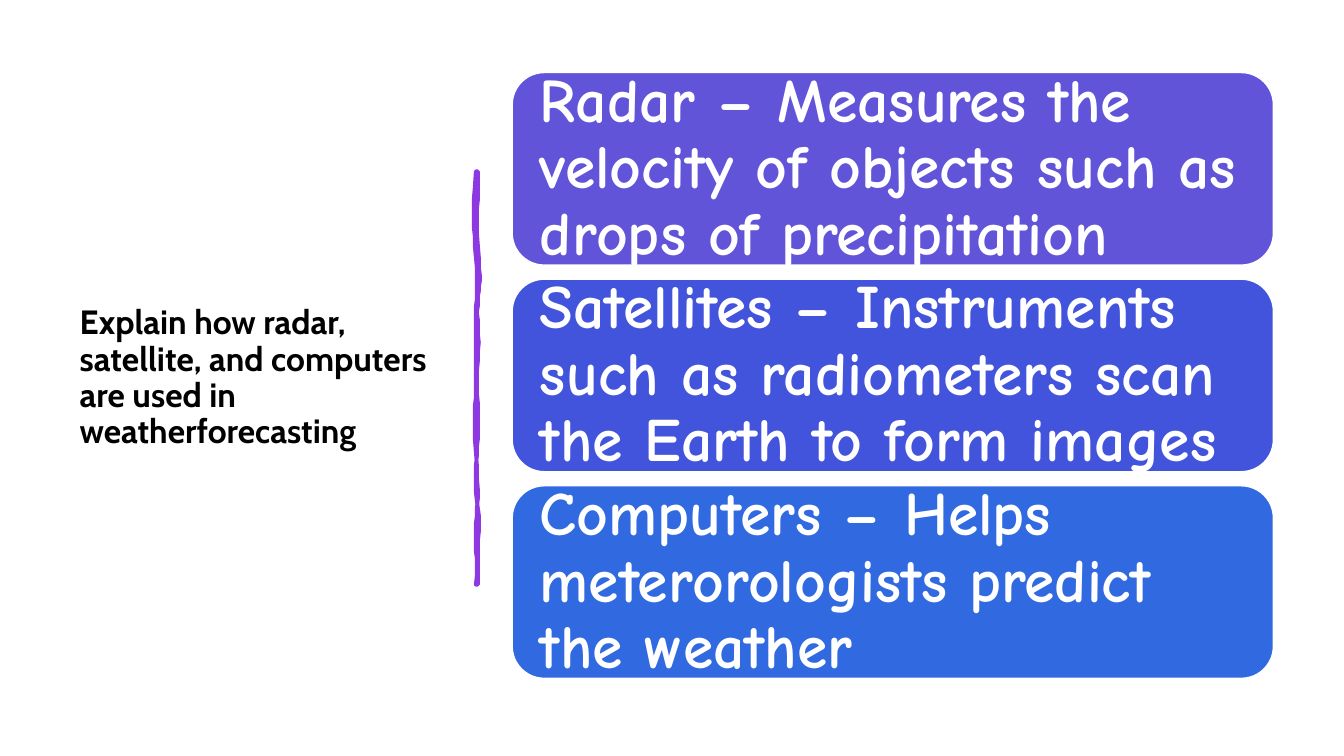
from dataclasses import dataclass

from pptx import Presentation
from pptx.dml.color import RGBColor
from pptx.enum.shapes import MSO_SHAPE
from pptx.enum.text import MSO_ANCHOR, MSO_AUTO_SIZE, PP_ALIGN
from pptx.util import Inches, Pt

WIDE, TALL = Inches(13.33), Inches(7.5)
CELL = TALL / 750
STEPS = 8


@dataclass
class Card:
    words: str
    fill: str


@dataclass
class Bend:
    pull: tuple[int, int]
    push: tuple[int, int]
    end: tuple[int, int]


CARDS = [
    Card("Radar – Measures the velocity of objects such as drops of precipitation", "6154D9"),
    Card("Satellites – Instruments such as radiometers scan the Earth to form images", "4254DC"),
    Card("Computers – Helps meterorologists predict the weather", "3069E0"),
]

START = (472, 170)
BENDS = [
    Bend((473, 170), (473, 170), (474, 170)),
    Bend((476, 186), (471, 207), (474, 243)),
    Bend((477, 279), (475, 285), (474, 299)),
    Bend((472, 313), (476, 331), (474, 359)),
    Bend((471, 387), (476, 413), (474, 436)),
    Bend((472, 458), (471, 485), (474, 504)),
    Bend((477, 523), (472, 548), (474, 580)),
    Bend((473, 580), (473, 580), (472, 580)),
    Bend((474, 554), (471, 536), (472, 524)),
    Bend((473, 513), (475, 483), (472, 448)),
    Bend((469, 413), (472, 406), (472, 375)),
    Bend((471, 345), (472, 341), (472, 319)),
    Bend((472, 298), (474, 285), (472, 255)),
    Bend((470, 226), (469, 212), (472, 170)),
]


def tint(code: str) -> RGBColor:
    return RGBColor.from_string(code)


def across(share: float) -> int:
    return round(WIDE * share / 100)


def down(share: float) -> int:
    return round(TALL * share / 100)


def write(shape, words: str, font: str, size: int, ink: str) -> None:
    frame = shape.text_frame
    frame.word_wrap = True
    frame.auto_size = MSO_AUTO_SIZE.NONE
    frame.vertical_anchor = MSO_ANCHOR.MIDDLE
    para = frame.paragraphs[0]
    para.alignment = PP_ALIGN.LEFT
    para.line_spacing = 0.9
    run = para.add_run()
    run.text = words
    run.font.name = font
    run.font.size = Pt(size)
    run.font.bold = True
    run.font.color.rgb = tint(ink)


def paint(shape, fill: str, line: str, weight: float) -> None:
    shape.shadow.inherit = False
    shape.fill.solid()
    shape.fill.fore_color.rgb = tint(fill)
    shape.line.color.rgb = tint(line)
    shape.line.width = Pt(weight)


def trace(start: tuple[int, int], bends: list[Bend]) -> list[tuple[float, float]]:
    dots = []
    for bend in bends:
        for step in range(1, STEPS + 1):
            t = step / STEPS
            u = 1 - t
            dots.append(tuple(
                u**3 * a + 3 * u * u * t * b + 3 * u * t * t * c + t**3 * d
                for a, b, c, d in zip(start, bend.pull, bend.push, bend.end)
            ))
        start = bend.end
    return dots


def draw_title(slide) -> None:
    title = slide.shapes.title
    title.left, title.top = across(5.18), down(9.33)
    title.width, title.height = across(28.06), down(81.47)
    write(title, "Explain how radar, satellite, and computers are used in weatherforecasting",
          "Cabin", 24, "000000")


def draw_rule(slide) -> None:
    pen = slide.shapes.build_freeform(*START, scale=CELL)
    pen.add_line_segments(trace(START, BENDS), close=True)
    paint(pen.convert_to_shape(), "8E38E1", "8E38E1", 2.75)


def draw_card(slide, card: Card, row: int) -> None:
    box = slide.shapes.add_shape(
        MSO_SHAPE.ROUNDED_RECTANGLE,
        across(38.11), down(9.6 + 27.33 * row), across(56.64), down(25.47),
    )
    paint(box, card.fill, "FFFFFF", 1)
    frame = box.text_frame
    frame.margin_left = frame.margin_right = across(2.06)
    frame.margin_top = frame.margin_bottom = 0
    write(box, card.words, "Comic Neue", 44, "FFFFFF")
    inset = box.adjustments[0] * box.height * 0.29
    frame.margin_left = frame.margin_right = round(across(2.06) - inset)


def main() -> None:
    deck = Presentation()
    deck.slide_width, deck.slide_height = WIDE, TALL
    slide = deck.slides.add_slide(deck.slide_layouts[5])
    draw_title(slide)
    draw_rule(slide)
    for row, card in enumerate(CARDS):
        draw_card(slide, card, row)
    deck.save("out.pptx")


if __name__ == "__main__":
    main()
